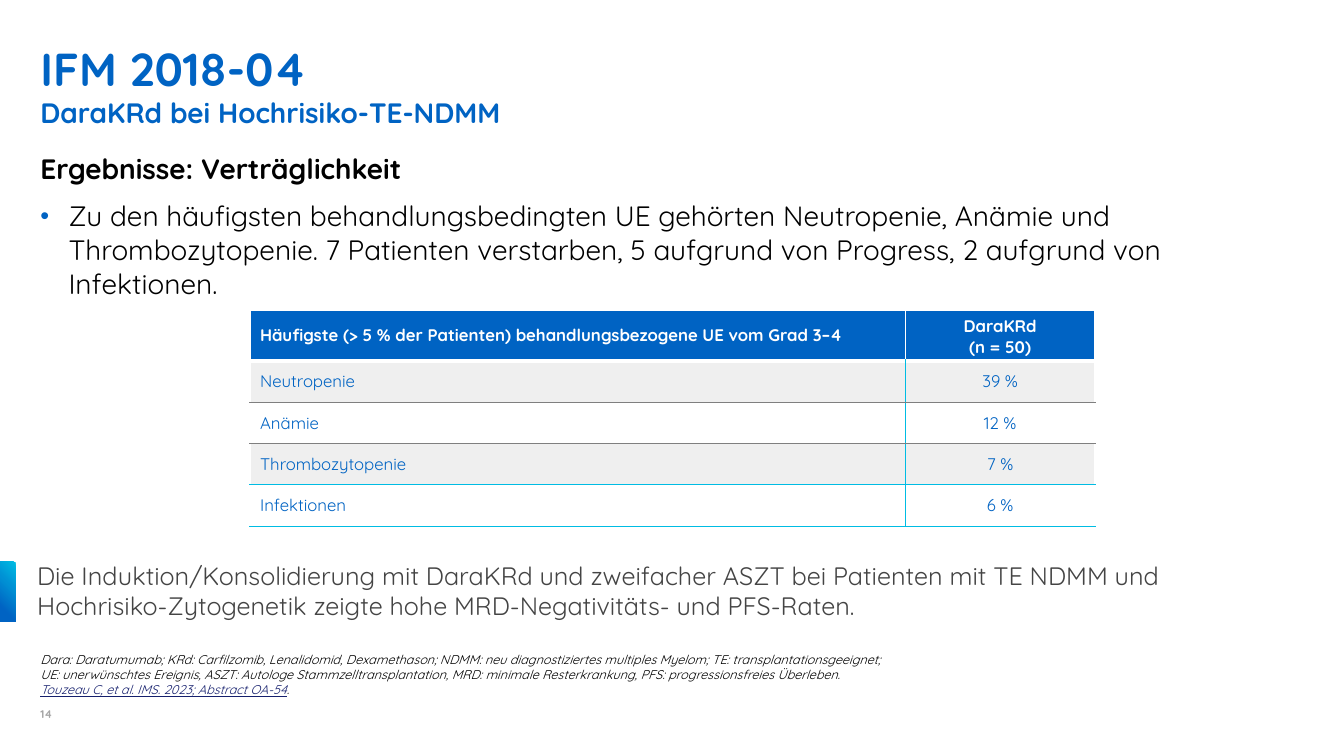
from pptx import Presentation
from pptx.dml.color import RGBColor
from pptx.enum.shapes import MSO_SHAPE
from pptx.enum.text import MSO_ANCHOR, MSO_AUTO_SIZE, PP_ALIGN
from pptx.oxml import parse_xml
from pptx.oxml.ns import nsdecls
from pptx.util import Inches, Pt

BLUE = RGBColor(0x00, 0x63, 0xC3)
CYAN = RGBColor(0x00, 0xBC, 0xE3)
MID_BLUE = RGBColor(0x00, 0x90, 0xD4)
NAVY = RGBColor(0x15, 0x1F, 0x6D)
BLACK = RGBColor(0, 0, 0)
WHITE = RGBColor(0xFF, 0xFF, 0xFF)
STRIPE = RGBColor(0xEF, 0xEF, 0xEF)
RULE_GRAY = RGBColor(0x7F, 0x7F, 0x7F)
TEXT_GRAY = RGBColor(0x44, 0x44, 0x44)
NUMBER_GRAY = RGBColor(0xA6, 0xA6, 0xA6)
LEFT = 0.4
CONTENT_WIDTH = 12.53


def set_font(item, size, color, bold=False, italic=False):
    font = item.font
    font.name, font.size = "Quicksand", Pt(size)
    font.bold, font.italic = bold, italic
    font.color.rgb = color


def add_text(left, top, width, height, inset=0, anchor=MSO_ANCHOR.TOP):
    box = slide.shapes.add_textbox(Inches(left), Inches(top), Inches(width), Inches(height))
    frame = box.text_frame
    frame.word_wrap = True
    frame.vertical_anchor = anchor
    frame.margin_left = frame.margin_right = Inches(inset)
    frame.margin_top = frame.margin_bottom = Inches(inset / 2)
    return frame


presentation = Presentation()
presentation.slide_width, presentation.slide_height = Inches(13.33), Inches(7.5)
slide = presentation.slides.add_slide(presentation.slide_layouts[5])

title = slide.shapes.title
title.left, title.top = Inches(LEFT), Inches(0.4)
title.width, title.height = Inches(CONTENT_WIDTH), Inches(0.89)
frame = title.text_frame
frame.margin_left = frame.margin_right = frame.margin_top = frame.margin_bottom = 0
frame.vertical_anchor = MSO_ANCHOR.TOP
frame.auto_size = MSO_AUTO_SIZE.NONE
frame.word_wrap = True
paragraph = frame.paragraphs[0]
paragraph.alignment = PP_ALIGN.LEFT
for index, (text, size) in enumerate([("IFM 2018-04", 33), ("DaraKRd bei Hochrisiko-TE-NDMM", 20)]):
    if index:
        paragraph.add_line_break()
    run = paragraph.add_run()
    run.text = text
    set_font(run, size, BLUE, bold=True)

frame = add_text(LEFT, 1.5, CONTENT_WIDTH, 4.5)
heading = frame.paragraphs[0]
heading.text = "Ergebnisse: Verträglichkeit"
heading.space_after = Pt(10)
set_font(heading, 20, BLACK, bold=True)
bullet = frame.add_paragraph()
bullet.text = ("Zu den häufigsten behandlungsbedingten UE gehörten Neutropenie, Anämie und "
               "Thrombozytopenie. 7 Patienten verstarben, 5 aufgrund von Progress, "
               "2 aufgrund von Infektionen.")
bullet.space_after = Pt(10)
properties = bullet._p.get_or_add_pPr()
properties.set("marL", str(Inches(0.28)))
properties.set("indent", str(-Inches(0.28)))
for element in (f'<a:buClr {nsdecls("a")}><a:srgbClr val="{BLUE}"/></a:buClr>',
                f'<a:buSzPct {nsdecls("a")} val="90000"/>',
                f'<a:buFont {nsdecls("a")} typeface="Arial"/>',
                f'<a:buChar {nsdecls("a")} char="•"/>'):
    properties.append(parse_xml(element))
set_font(bullet, 20, BLACK)

rows = [("Häufigste (> 5 % der Patienten) behandlungsbezogene UE vom Grad 3–4", "DaraKRd\n(n = 50)"),
        ("Neutropenie", "39 %"), ("Anämie", "12 %"),
        ("Thrombozytopenie", "7 %"), ("Infektionen", "6 %")]
rules = [(WHITE, 3), (RULE_GRAY, 1), (RULE_GRAY, 1), (CYAN, 1), (CYAN, 1)]
table = slide.shapes.add_table(len(rows), 2, Inches(2.48), Inches(3.08),
                               Inches(8.38), Inches(2.14)).table
table.columns[0].width, table.columns[1].width = Inches(6.5), Inches(1.88)
for row_index, values in enumerate(rows):
    header = row_index == 0
    table.rows[row_index].height = Inches(0.5 if header else 0.41)
    for column_index, text in enumerate(values):
        cell = table.cell(row_index, column_index)
        cell.text = text
        cell.vertical_anchor = MSO_ANCHOR.MIDDLE
        for paragraph in cell.text_frame.paragraphs:
            paragraph.alignment = PP_ALIGN.CENTER if column_index else PP_ALIGN.LEFT
            set_font(paragraph, 12, WHITE if header else BLUE, bold=header)
        divider = (WHITE if header else CYAN, 1)
        borders = {"lnL": divider if column_index else (WHITE, 1),
                   "lnR": (WHITE, 1) if column_index else divider,
                   "lnT": (WHITE, 1) if header else rules[row_index - 1],
                   "lnB": rules[row_index]}
        for tag, (color, width) in borders.items():
            cell._tc.get_or_add_tcPr().append(parse_xml(
                f'<a:{tag} {nsdecls("a")} w="{Pt(width)}"><a:solidFill>'
                f'<a:srgbClr val="{color}"/></a:solidFill></a:{tag}>'))
        cell.fill.solid()
        cell.fill.fore_color.rgb = BLUE if header else STRIPE if row_index % 2 else WHITE

accent = slide.shapes.add_shape(MSO_SHAPE.RECTANGLE, Inches(-0.22), Inches(5.79),
                                Inches(0.59), Inches(0.16))
accent.rotation = 90
accent.shadow.inherit = False
accent.line.fill.background()
stops = "".join(f'<a:gs pos="{position * 1000}"><a:srgbClr val="{color}"/></a:gs>'
                for position, color in [(0, CYAN), (39, MID_BLUE), (80, BLUE)])
accent._element.spPr.find("{*}prstGeom").addnext(parse_xml(
    f'<a:gradFill {nsdecls("a")} rotWithShape="1"><a:gsLst>{stops}</a:gsLst>'
    '<a:lin ang="2700000" scaled="0"/></a:gradFill>'))

paragraph = add_text(0.27, 5.51, 11.6, 0.71, inset=0.1).paragraphs[0]
paragraph.text = ("Die Induktion/Konsolidierung mit DaraKRd und zweifacher ASZT bei Patienten mit TE NDMM "
                  "und Hochrisiko-Zytogenetik zeigte hohe MRD-Negativitäts- und PFS-Raten.")
set_font(paragraph, 18, TEXT_GRAY)

frame = add_text(LEFT, 6.38, 9.64, 0.54, anchor=MSO_ANCHOR.BOTTOM)
abbreviations = frame.paragraphs[0]
abbreviations.text = (
    "Dara: Daratumumab; KRd: Carfilzomib, Lenalidomid, Dexamethason; NDMM: neu diagnostiziertes "
    "multiples Myelom; TE: transplantationsgeeignet; \v"
    "UE: unerwünschtes Ereignis, ASZT: Autologe Stammzelltransplantation, "
    "MRD: minimale Resterkrankung, PFS: progressionsfreies Überleben.")
set_font(abbreviations, 9, BLACK, italic=True)
citation = frame.add_paragraph()
for text, color in [("Touzeau C, et al. IMS. 2023; Abstract OA-54", NAVY), (".", BLACK)]:
    run = citation.add_run()
    run.text = text
    set_font(run, 9, color, italic=True)
    run.font.underline = color == NAVY

paragraph = add_text(LEFT, 6.92, 0.45, 0.23, anchor=MSO_ANCHOR.BOTTOM).paragraphs[0]
paragraph.text = "14"
set_font(paragraph, 8, NUMBER_GRAY, bold=True)

presentation.save("out.pptx")
